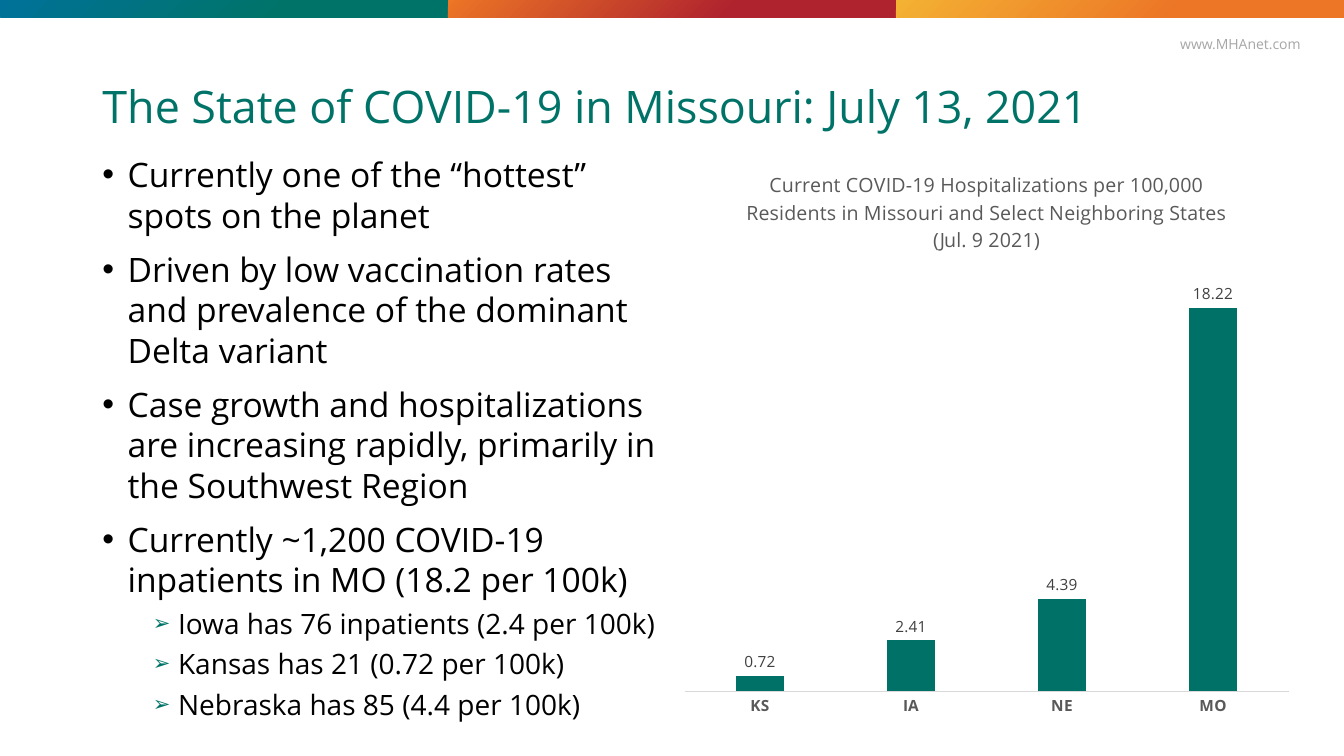
"""Build a slide on COVID-19 in Missouri with a list and a column chart."""
import lxml.etree
import pptx
import pptx.chart.data
import pptx.dml.color
import pptx.enum.chart
import pptx.enum.shapes
import pptx.enum.text
import pptx.oxml.ns
import pptx.util

Pt = pptx.util.Pt
qn = pptx.oxml.ns.qn
ALIGN = pptx.enum.text.PP_ALIGN
ANCHOR = pptx.enum.text.MSO_ANCHOR
FACE = "Open Sans"
HUES = {
    "teal": "007368", "blue": "007299", "orange": "EC7526", "red": "AF232E",
    "gold": "F4B233", "black": "000000", "pale": "A6A6A6", "gray": "595959",
    "dark": "404040", "rule": "D9D9D9", "bar": "007167",
}
BANDS = [("blue", "teal"), ("orange", "red"), ("gold", "orange")]
BULLETS = [
    dict(left=18, before=10, size=24, mark="•", tint="black", scale=100),
    dict(left=54, before=5, size=20, mark="➢", tint="teal", scale=75),
]
POINTS = [
    (0, "Currently one of the “hottest” spots on the planet"),
    (0, "Driven by low vaccination rates and prevalence of the dominant Delta variant"),
    (0, "Case growth and hospitalizations are increasing rapidly, "
        "primarily in the Southwest Region"),
    (0, "Currently ~1,200 COVID-19 inpatients in MO (18.2 per 100k)"),
    (1, "Iowa has 76 inpatients (2.4 per 100k)"),
    (1, "Kansas has 21 (0.72 per 100k)"),
    (1, "Nebraska has 85 (4.4 per 100k)"),
]
RATES = {"KS": 0.72, "IA": 2.41, "NE": 4.39, "MO": 18.22}
HEADING = ("Current COVID-19 Hospitalizations per 100,000 Residents in Missouri "
           "and Select Neighboring States (Jul. 9 2021)")


def hue(name):
    return pptx.dml.color.RGBColor.from_string(HUES[name])


def style(font, size, color, bold=False):
    font.name, font.size, font.bold = FACE, Pt(size), bold
    font.color.rgb = hue(color)


def write(para, text, size=24, color="black", align=ALIGN.LEFT, line=None, before=0):
    para.alignment = align
    para.space_before = Pt(before)
    if line:
        para.line_spacing = line
    run = para.add_run()
    run.text = text
    style(run.font, size, color)


def place(shape, left, top, width, height):
    shape.left, shape.top = Pt(left), Pt(top)
    shape.width, shape.height = Pt(width), Pt(height)


def add_band(slide, left, width, start, end):
    band = slide.shapes.add_shape(
        pptx.enum.shapes.MSO_SHAPE.RECTANGLE, Pt(left), 0, Pt(width), Pt(12.5))
    band.shadow.inherit = False
    band.line.fill.background()
    band.fill.gradient()
    band.fill.gradient_angle = 315
    for stop, spot, color in zip(band.fill.gradient_stops, (0, 0.63), (start, end)):
        stop.position = spot
        stop.color.rgb = hue(color)


def add_mark(para, left, mark, tint, scale):
    props = para._p.get_or_add_pPr()
    props.set("marL", str(Pt(left)))
    props.set("indent", str(Pt(-18)))
    color = lxml.etree.SubElement(props, qn("a:buClr"))
    lxml.etree.SubElement(color, qn("a:srgbClr"), val=HUES[tint])
    lxml.etree.SubElement(props, qn("a:buSzPct"), val=str(scale * 1000))
    lxml.etree.SubElement(props, qn("a:buFont"), typeface="Arial")
    lxml.etree.SubElement(props, qn("a:buChar"), char=mark)


def fill_list(body):
    place(body, 66, 106.5, 414, 412.5)
    frame = body.text_frame
    frame.auto_size = pptx.enum.text.MSO_AUTO_SIZE.NONE
    frame.vertical_anchor = ANCHOR.TOP
    for spot, (level, text) in enumerate(POINTS):
        para = frame.add_paragraph() if spot else frame.paragraphs[0]
        para.level = level
        look = BULLETS[level]
        write(para, text, size=look["size"], line=1.0,
              before=look["before"] if spot else 0)
        add_mark(para, look["left"], look["mark"], look["tint"], look["scale"])


def set_plot(chart, left, top, width, height):
    area = chart._chartSpace.chart.plotArea
    for old in area.findall(qn("c:layout")):
        area.remove(old)
    layout = lxml.etree.Element(qn("c:layout"))
    area.insert(0, layout)
    manual = lxml.etree.SubElement(layout, qn("c:manualLayout"))
    parts = dict(layoutTarget="inner", xMode="edge", yMode="edge",
                 x=left, y=top, w=width, h=height)
    for tag, value in parts.items():
        lxml.etree.SubElement(manual, qn("c:" + tag), val=str(value))


def add_columns(slide):
    kinds = pptx.enum.chart
    data = pptx.chart.data.CategoryChartData()
    data.categories = list(RATES)
    data.add_series("Series 1", list(RATES.values()))
    chart = slide.shapes.add_chart(
        kinds.XL_CHART_TYPE.COLUMN_CLUSTERED,
        Pt(480), Pt(106.5), Pt(449.5), Pt(412), data).chart
    style(chart.font, 10, "black")
    chart.has_legend = False
    chart.has_title = True
    write(chart.chart_title.text_frame.paragraphs[0], HEADING,
          size=14, color="gray", align=ALIGN.CENTER)
    chart.chart_title.include_in_layout = False
    set_plot(chart, 0.02, 0.21, 0.96, 0.73)

    scale = chart.value_axis
    scale.visible = False
    scale.has_major_gridlines = False
    scale.minimum_scale, scale.maximum_scale = 0, 20
    states = chart.category_axis
    states.major_tick_mark = kinds.XL_TICK_MARK.NONE
    states.format.line.color.rgb = hue("rule")
    states.format.line.width = Pt(0.75)
    style(states.tick_labels.font, 11, "gray", bold=True)

    plot = chart.plots[0]
    plot.vary_by_categories = False
    plot.gap_width, plot.overlap = 219, -27
    bars = plot.series[0].format.fill
    bars.solid()
    bars.fore_color.rgb = hue("bar")
    plot.has_data_labels = True
    labels = plot.data_labels
    labels.show_value = True
    labels.position = kinds.XL_LABEL_POSITION.OUTSIDE_END
    style(labels.font, 11, "dark")


def main():
    deck = pptx.Presentation()
    deck.slide_width, deck.slide_height = Pt(960), Pt(540)
    slide = deck.slides.add_slide(deck.slide_layouts[1])
    for spot, (start, end) in enumerate(BANDS):
        add_band(slide, spot * 320, 320, start, end)

    site = slide.shapes.add_textbox(Pt(832.5), Pt(22), Pt(107), Pt(19.5))
    site.text_frame.word_wrap = True
    write(site.text_frame.paragraphs[0], "www.MHAnet.com",
          size=10, color="pale", align=ALIGN.CENTER)

    title = slide.shapes.title
    place(title, 66, 58, 828, 39)
    title.text_frame.auto_size = pptx.enum.text.MSO_AUTO_SIZE.NONE
    title.text_frame.vertical_anchor = ANCHOR.MIDDLE
    write(title.text_frame.paragraphs[0],
          "The State of COVID-19 in Missouri: July 13, 2021",
          size=32, color="teal", line=0.9)

    fill_list(slide.placeholders[1])
    add_columns(slide)
    deck.save("out.pptx")


if __name__ == "__main__":
    main()
